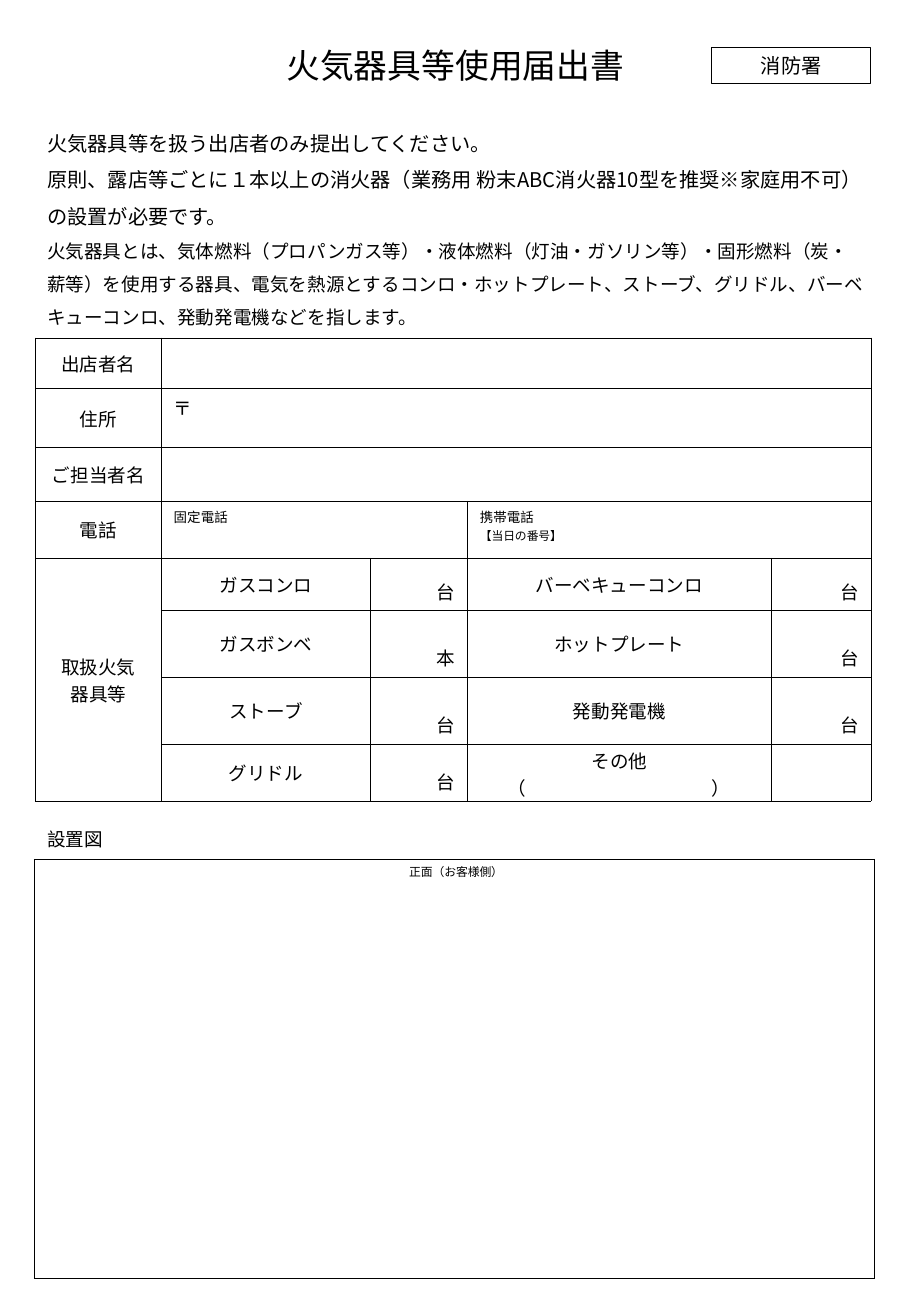
import pptx
import pptx.dml.color
import pptx.enum.shapes
import pptx.enum.text
import pptx.oxml
import pptx.oxml.ns
import pptx.util

FONT = "Noto Sans CJK JP"
BLACK = "000000"
PAGE_W, PAGE_H = 7.5, 10.83
ALIGN = pptx.enum.text.PP_ALIGN
ANCHOR = pptx.enum.text.MSO_ANCHOR

# Form grid, in percent of the page
FORM_LEFT, FORM_TOP = 3.87, 25.67
FORM_COLS = [13.87, 22.93, 10.67, 33.33, 10.93]
FORM_ROWS = [3.83, 4.52, 4.06, 4.34, 3.97, 5.08, 5.08, 4.34]
EQUIPMENT = [
    ("ガスコンロ", "台", "バーベキューコンロ", "台"),
    ("ガスボンベ", "本", "ホットプレート", "台"),
    ("ストーブ", "台", "発動発電機", "台"),
    ("グリドル", "台", "その他", ""),
]


def across(pct):
    return pptx.util.Inches(PAGE_W * pct / 100)


def down(pct):
    return pptx.util.Inches(PAGE_H * pct / 100)


def frame(x, y, w, h):
    return across(x), down(y), across(w), down(h)


def color(value):
    return pptx.dml.color.RGBColor.from_string(value)


def write(tf, lines, align=ALIGN.LEFT, spacing=None):
    """Fill a text frame with (text, size) lines."""
    for i, (text, size) in enumerate(lines):
        p = tf.paragraphs[0] if i == 0 else tf.add_paragraph()
        p.alignment = align
        if spacing:
            p.line_spacing = spacing
        r = p.add_run()
        r.text = text
        r.font.size = pptx.util.Pt(size)
        r.font.name = FONT
        r.font.color.rgb = color(BLACK)
        ea = pptx.oxml.parse_xml(
            f'<a:ea {pptx.oxml.ns.nsdecls("a")} typeface="{FONT}"/>')
        r.font._element.append(ea)


def add_text(s, box, lines, align=ALIGN.LEFT, spacing=None):
    tf = s.shapes.add_textbox(*frame(*box)).text_frame
    tf.word_wrap = True
    write(tf, lines, align, spacing)


def add_stamp_box(s, box, text, size):
    sp = s.shapes.add_shape(pptx.enum.shapes.MSO_SHAPE.RECTANGLE, *frame(*box))
    sp.shadow.inherit = False
    sp.fill.background()
    sp.line.color.rgb = color(BLACK)
    sp.line.width = pptx.util.Pt(0.75)
    tf = sp.text_frame
    tf.vertical_anchor = ANCHOR.MIDDLE
    write(tf, [(text, size)], ALIGN.CENTER)


def style_cell(cell):
    """Thin black border, no fill, and a small font for empty cells."""
    tc_pr = cell._tc.get_or_add_tcPr()
    for side in ("lnL", "lnR", "lnT", "lnB"):
        tc_pr.append(pptx.oxml.parse_xml(
            f'<a:{side} {pptx.oxml.ns.nsdecls("a")} w="{pptx.util.Pt(0.25)}">'
            f'<a:solidFill><a:srgbClr val="{BLACK}"/></a:solidFill></a:{side}>'))
    cell.fill.background()
    end = cell.text_frame.paragraphs[0]._p.get_or_add_endParaRPr()
    end.set("sz", "800")


def add_grid(s, left, top, cols, rows):
    box = frame(left, top, sum(cols), sum(rows))
    table = s.shapes.add_table(len(rows), len(cols), *box).table
    table.first_row = table.horz_banding = False
    for column, pct in zip(table.columns, cols):
        column.width = across(pct)
    for row, pct in zip(table.rows, rows):
        row.height = down(pct)
    for cell in table.iter_cells():
        style_cell(cell)
    return table


def fill_cell(cell, lines, align=ALIGN.CENTER, anchor=ANCHOR.MIDDLE):
    cell.vertical_anchor = anchor
    write(cell.text_frame, lines, align)


def add_other_blank(cell):
    """Second line of the last item: brackets set apart by tab stops."""
    cell.margin_top, cell.margin_bottom = pptx.util.Inches(0.02), 0
    write_at = cell.text_frame
    write_at.paragraphs[0].alignment = ALIGN.CENTER
    p = write_at.paragraphs[-1]
    p.alignment = ALIGN.LEFT if len(write_at.paragraphs) > 1 else ALIGN.CENTER
    stops = "".join(f'<a:tab pos="{pptx.util.Inches(x)}" algn="l"/>'
                    for x in (0.23, 1.91))
    p._p.get_or_add_pPr().append(pptx.oxml.parse_xml(
        f'<a:tabLst {pptx.oxml.ns.nsdecls("a")}>{stops}</a:tabLst>'))


def add_form(s):
    table = add_grid(s, FORM_LEFT, FORM_TOP, FORM_COLS, FORM_ROWS)
    # Merged answer fields
    for row in range(3):
        table.cell(row, 1).merge(table.cell(row, 4))
    for col in (1, 3):
        table.cell(3, col).merge(table.cell(3, col + 1))
    table.cell(4, 0).merge(table.cell(7, 0))
    # Labels and hints
    for row, label in enumerate(["出店者名", "住所", "ご担当者名", "電話"]):
        fill_cell(table.cell(row, 0), [(label, 11)])
    fill_cell(table.cell(4, 0), [("取扱火気", 11), ("器具等", 11)])
    hints = [(1, 1, [("〒", 11)]), (3, 1, [("固定電話", 8)]),
             (3, 3, [("携帯電話", 8), ("【当日の番号】", 7)])]
    for row, col, lines in hints:
        fill_cell(table.cell(row, col), lines, ALIGN.LEFT, ANCHOR.TOP)
    # Equipment names and counters
    for row, items in enumerate(EQUIPMENT, start=4):
        for col, text in enumerate(items, start=1):
            if not text:
                continue
            cell = table.cell(row, col)
            if col % 2:
                lines = [(text, 11)]
                if text == "その他":
                    lines.append(("\t（\t）", 11))
                fill_cell(cell, lines)
            else:
                fill_cell(cell, [(text, 11)], ALIGN.RIGHT, ANCHOR.BOTTOM)
    add_other_blank(table.cell(7, 3))


def main():
    prs = pptx.Presentation()
    prs.slide_width, prs.slide_height = across(100), down(100)
    s = prs.slides.add_slide(prs.slide_layouts[6])

    # Heading and instructions
    add_text(s, (0, 2.95, 100, 4.06), [("火気器具等使用届出書", 20)], ALIGN.CENTER)
    add_text(s, (3.87, 8.59, 92.53, 16.99), [
        ("火気器具等を扱う出店者のみ提出してください。", 12),
        ("原則、露店等ごとに１本以上の消火器（業務用 粉末ABC消火器10型を推奨"
         "※家庭用不可）の設置が必要です。", 12),
        ("火気器具とは、気体燃料（プロパンガス等）・液体燃料（灯油・ガソリン等）・"
         "固形燃料（炭・薪等）を使用する器具、電気を熱源とするコンロ・ホットプレート、"
         "ストーブ、グリドル、バーベキューコンロ、発動発電機などを指します。", 11),
    ], spacing=1.5)

    add_form(s)

    # Layout sketch area
    add_grid(s, 3.73, 65.28, [92.27], [31.86])
    add_text(s, (3.87, 62.42, 27.33, 2.68), [("設置図", 11)])
    add_stamp_box(s, (78.13, 3.6, 17.47, 2.77), "消防署", 12)
    add_text(s, (36.4, 65.28, 27.33, 2.03), [("正面（お客様側）", 7)], ALIGN.CENTER)

    prs.save("out.pptx")


if __name__ == "__main__":
    main()
